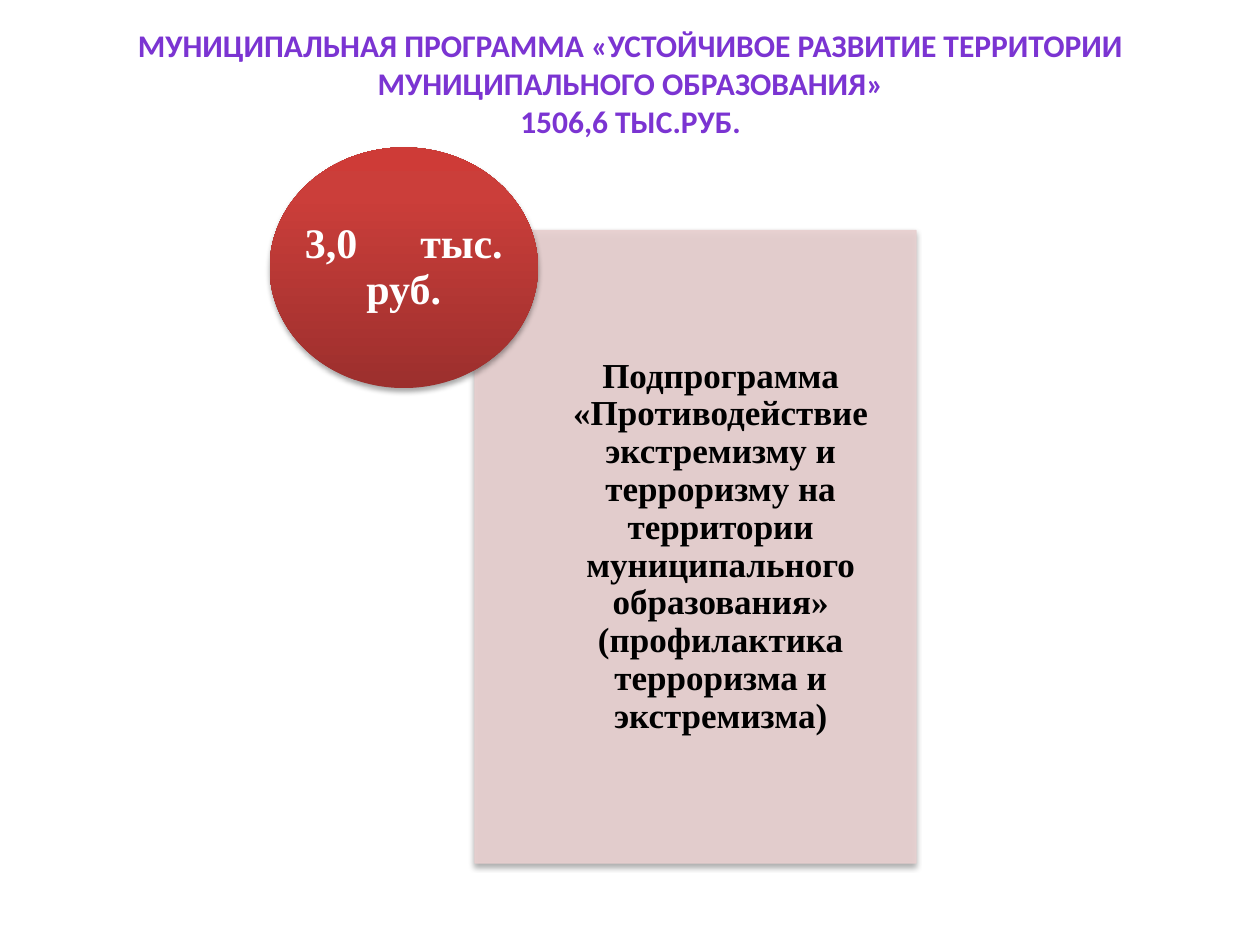
from dataclasses import dataclass
from lxml import etree
from pptx import Presentation
from pptx.dml.color import RGBColor
from pptx.enum import shapes, text
from pptx.oxml import ns
from pptx.util import Inches, Pt


@dataclass(frozen=True)
class Theme:
    head: str = "7B34D2"
    card: str = "E8D0D0"
    ink: str = "000000"
    light: str = "FFFFFF"
    red: tuple = ((0, "9C2F2D"), (0.8, "CB3E3A"), (1, "CE3B37"))
    sans: str = "Calibri"
    serif: str = "Times New Roman"
    title: int = 18
    body: int = 20
    sum: int = 24


@dataclass(frozen=True)
class Box:
    x: float
    y: float
    w: float
    h: float

    def place(self) -> tuple:
        return tuple(Inches(n) for n in (self.x, self.y, self.w, self.h))


@dataclass(frozen=True)
class Style:
    font: str
    size: int
    color: str


THEME = Theme()
HEAD = Box(0.16, 0.16, 9.69, 1.01)
CARD = Box(3.77, 1.83, 3.5, 5.02)
BADGE = Box(2.14, 1.17, 2.13, 1.91)
TITLE = (
    "МУНИЦИПАЛЬНАЯ ПРОГРАММА «УСТОЙЧИВОЕ РАЗВИТИЕ ТЕРРИТОРИИ",
    "МУНИЦИПАЛЬНОГО ОБРАЗОВАНИЯ»",
    "1506,6 ТЫС.РУБ.",
)
BODY = (
    "Подпрограмма «Противодействие экстремизму и терроризму на территории "
    "муниципального образования» (профилактика терроризма и экстремизма)"
)


def add_node(root, tag: str, **attrs):
    return etree.SubElement(root, ns.qn(tag), **attrs)


def add_run(para, words: str, style: Style):
    run = para.add_run()
    run.text = words
    font = run.font
    font.name, font.size, font.bold = style.font, Pt(style.size), True
    font.color.rgb = RGBColor.from_string(style.color)
    return run


def set_frame(frame, pads: tuple, anchor) -> None:
    frame.word_wrap = True
    frame.auto_size = text.MSO_AUTO_SIZE.NONE
    frame.vertical_anchor = anchor
    (frame.margin_left, frame.margin_top,
     frame.margin_right, frame.margin_bottom) = (Inches(n) for n in pads)


def center(para, lead: float = 1.0):
    para.alignment = text.PP_ALIGN.CENTER
    para.line_spacing = lead
    return para


def add_shade(shape) -> None:
    shape.shadow.inherit = False
    list_ = shape._element.spPr.find(ns.qn("a:effectLst"))
    shade = add_node(list_, "a:outerShdw", blurRad=str(Pt(3.1)),
                     dist=str(Pt(1.8)), dir="5400000", rotWithShape="0")
    color = add_node(shade, "a:srgbClr", val=THEME.ink)
    add_node(color, "a:alpha", val="35000")


def fade(fill) -> None:
    fill.solid()
    fill.fore_color.rgb = RGBColor.from_string(THEME.card)
    node = fill._xPr.find(ns.qn("a:solidFill"))[0]
    add_node(node, "a:alpha", val="90000")


def fill_red(shape) -> None:
    shape.fill.gradient()
    shape.fill.gradient_angle = 90
    stops = shape._element.spPr.find(ns.qn("a:gradFill")).find(ns.qn("a:gsLst"))
    for stop in list(stops):
        stops.remove(stop)
    for spot, color in THEME.red:
        stop = add_node(stops, "a:gs", pos=str(int(spot * 100000)))
        add_node(stop, "a:srgbClr", val=color)


def draw_title(slide) -> None:
    title = slide.shapes.title
    title.left, title.top, title.width, title.height = HEAD.place()
    frame = title.text_frame
    set_frame(frame, (0.1, 0.05, 0.1, 0.05), text.MSO_ANCHOR.TOP)
    style = Style(THEME.sans, THEME.title, THEME.head)
    for i, line in enumerate(TITLE):
        para = frame.add_paragraph() if i else frame.paragraphs[0]
        add_run(center(para), line, style)


def draw_card(slide) -> None:
    card = slide.shapes.add_shape(shapes.MSO_SHAPE.RECTANGLE, *CARD.place())
    fade(card.fill)
    card.line.width = Pt(0.75)
    fade(card.line.fill)
    add_shade(card)
    set_frame(card.text_frame, (0.56, 0.16, 0.16, 0.16), text.MSO_ANCHOR.MIDDLE)
    para = center(card.text_frame.paragraphs[0], 0.9)
    add_run(para, BODY, Style(THEME.serif, THEME.body, THEME.ink))


def draw_badge(slide) -> None:
    badge = slide.shapes.add_shape(shapes.MSO_SHAPE.OVAL, *BADGE.place())
    fill_red(badge)
    badge.line.fill.background()
    add_shade(badge)
    label = slide.shapes.add_textbox(*BADGE.place())
    set_frame(label.text_frame, (0, 0, 0, 0), text.MSO_ANCHOR.MIDDLE)
    para = center(label.text_frame.paragraphs[0], 0.9)
    style = Style(THEME.serif, THEME.sum, THEME.light)
    add_run(para, "3,0", style)
    gap = add_run(para, " ", style)
    gap.font._element.set("spc", "3000")
    add_run(para, "тыс. руб.", style)


def main() -> None:
    deck = Presentation()
    deck.slide_width, deck.slide_height = Inches(10), Inches(7.5)
    slide = deck.slides.add_slide(deck.slide_layouts[5])
    draw_title(slide)
    draw_card(slide)
    draw_badge(slide)
    deck.save("out.pptx")


if __name__ == "__main__":
    main()
